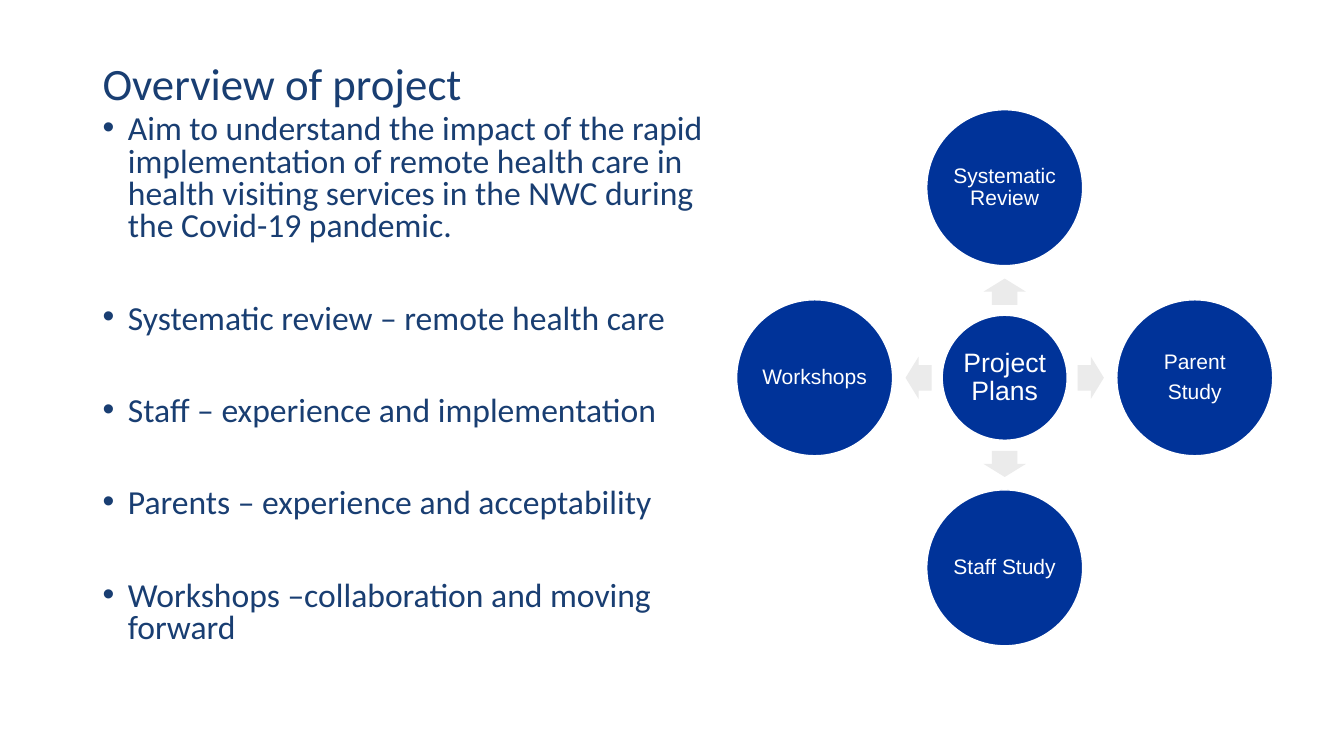
from dataclasses import dataclass
from math import cos, radians, sin

from lxml.etree import SubElement
from pptx import Presentation
from pptx.dml.color import RGBColor
from pptx.enum.shapes import MSO_SHAPE
from pptx.enum.text import MSO_ANCHOR, MSO_AUTO_SIZE, PP_ALIGN
from pptx.oxml.ns import qn
from pptx.util import Cm, Pt

COLORS = {"navy": "193E72", "blue": "003399", "grey": "EBEBEB", "white": "FFFFFF"}
CENTER_X, CENTER_Y = 25.32, 9.52
HUB_SIZE, STUDY_SIZE = 3.15, 3.93
STUDY_RADIUS, ARROW_RADIUS = 4.79, 2.17
ARROW_WIDTH, ARROW_HEIGHT = 0.66, 1.07

AIMS = [
    "Aim to understand the impact of the rapid implementation of remote health care in "
    "health visiting services in the NWC during the Covid-19 pandemic.",
    "Systematic review – remote health care",
    "Staff – experience and implementation",
    "Parents – experience and acceptability",
    "Workshops –collaboration and moving forward",
]


@dataclass
class Study:
    """A circle around the hub, at an angle clockwise from the right."""
    label: str
    angle: int


STUDIES = [
    Study("Systematic Review", 270),
    Study("Parent\nStudy", 0),
    Study("Staff Study", 90),
    Study("Workshops", 180),
]


def rgb(name: str) -> RGBColor:
    """Return a named colour."""
    return RGBColor.from_string(COLORS[name])


def style(p, font: str, size: float, color: str, spacing: float) -> None:
    """Format the runs and line spacing of a paragraph."""
    p.line_spacing = spacing
    for r in p.runs:
        r.font.name = font
        r.font.size = Pt(size)
        r.font.color.rgb = rgb(color)


def place(sp, left: float, top: float, width: float, height: float) -> None:
    """Move and size a placeholder in centimetres."""
    sp.left, sp.top, sp.width, sp.height = Cm(left), Cm(top), Cm(width), Cm(height)


def add_centered(s, kind, x: float, y: float, width: float, height: float, fill: str):
    """Add a filled shape around a centre point."""
    sp = s.shapes.add_shape(kind, Cm(x - width / 2), Cm(y - height / 2), Cm(width), Cm(height))
    sp.shadow.inherit = False
    sp.fill.solid()
    sp.fill.fore_color.rgb = rgb(fill)
    return sp


def add_circle(s, x: float, y: float, size: float, label: str, font_size: float) -> None:
    """Add a labelled circle."""
    sp = add_centered(s, MSO_SHAPE.OVAL, x, y, size, size, "blue")
    sp.line.color.rgb = rgb("white")
    sp.line.width = Pt(1)
    tf = sp.text_frame
    tf.word_wrap = True
    tf.vertical_anchor = MSO_ANCHOR.MIDDLE
    tf.margin_left = tf.margin_right = tf.margin_top = tf.margin_bottom = Cm(0.05)
    tf.text = label
    for i, p in enumerate(tf.paragraphs):
        p.alignment = PP_ALIGN.CENTER
        p.space_before = Pt(0.35 * font_size if i else 0)
        style(p, "Arial", font_size, "white", 0.9)


def add_study(s, study: Study) -> None:
    """Add an arrow from the hub and the study circle it points to."""
    dx, dy = cos(radians(study.angle)), sin(radians(study.angle))
    arrow = add_centered(s, MSO_SHAPE.RIGHT_ARROW, CENTER_X + ARROW_RADIUS * dx,
                         CENTER_Y + ARROW_RADIUS * dy, ARROW_WIDTH, ARROW_HEIGHT, "grey")
    arrow.line.fill.background()
    arrow.rotation = study.angle
    arrow.adjustments[0], arrow.adjustments[1] = 0.6, 0.5
    add_circle(s, CENTER_X + STUDY_RADIUS * dx, CENTER_Y + STUDY_RADIUS * dy,
               STUDY_SIZE, study.label, 15)


def fill_title(sp) -> None:
    """Write the slide title."""
    place(sp, 2.33, 0.97, 29.21, 2.41)
    tf = sp.text_frame
    tf.text = "Overview of project"
    tf.auto_size = MSO_AUTO_SIZE.NONE
    tf.vertical_anchor = MSO_ANCHOR.MIDDLE
    p = tf.paragraphs[0]
    p.alignment = PP_ALIGN.LEFT
    style(p, "Calibri", 32, "navy", 0.9)


def fill_aims(sp) -> None:
    """Write the bulleted list of aims."""
    place(sp, 2.33, 2.77, 15.95, 14.12)
    tf = sp.text_frame
    tf.text = "\n".join(AIMS)
    tf.auto_size = MSO_AUTO_SIZE.NONE
    for i, p in enumerate(tf.paragraphs):
        pPr = p._p.get_or_add_pPr()
        pPr.set("marL", str(Cm(0.64)))
        pPr.set("indent", str(Cm(-0.64)))
        SubElement(pPr, qn("a:buFont")).set("typeface", "Arial")
        SubElement(pPr, qn("a:buChar")).set("char", "•")
        p.space_before = Pt(43 if i else 0)
        style(p, "Calibri", 24, "navy", 0.8)


def main() -> None:
    """Build the slide and save it."""
    prs = Presentation()
    prs.slide_width, prs.slide_height = Cm(33.87), Cm(19.05)
    s = prs.slides.add_slide(prs.slide_layouts[1])
    fill_title(s.shapes.title)
    fill_aims(s.placeholders[1])
    add_circle(s, CENTER_X, CENTER_Y, HUB_SIZE, "Project Plans", 19)
    for study in STUDIES:
        add_study(s, study)
    prs.save("out.pptx")


if __name__ == "__main__":
    main()
